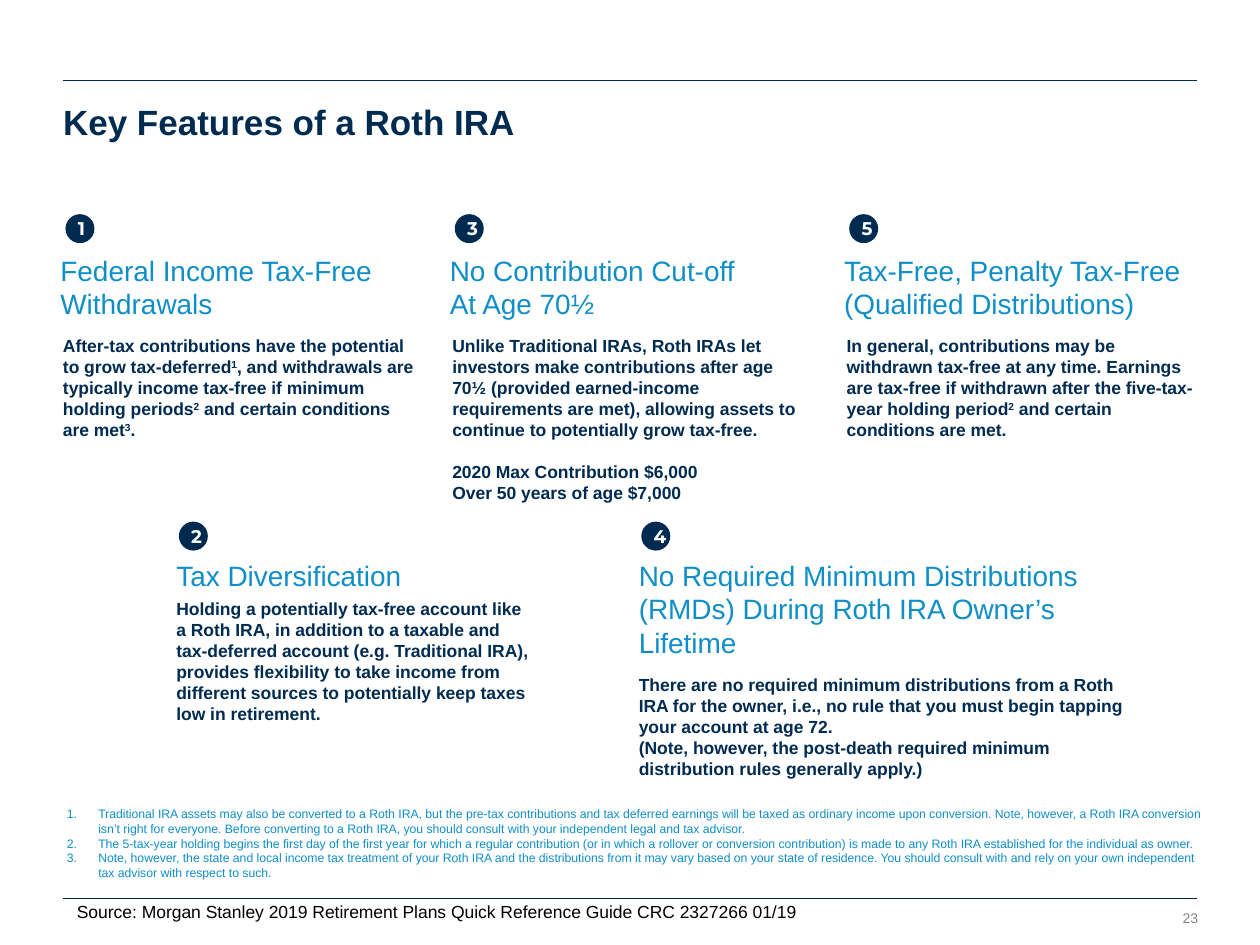
from lxml.etree import SubElement
from pptx import Presentation
from pptx.dml.color import RGBColor
from pptx.enum.shapes import MSO_CONNECTOR as CONN, MSO_SHAPE as SHAPE
from pptx.enum.text import MSO_ANCHOR as ANCHOR, MSO_AUTO_SIZE as AUTO, PP_ALIGN as ALIGN
from pptx.oxml.ns import qn
from pptx.util import Inches, Pt

NAVY = RGBColor(0x00, 0x2B, 0x51)
BLUE = RGBColor(0x0F, 0x8E, 0xC7)
GRAY = RGBColor(0x86, 0x86, 0x86)
BLACK = RGBColor(0x00, 0x00, 0x00)
WHITE = RGBColor(0xFF, 0xFF, 0xFF)

# Font formats
TITLE = dict(name="Arial", size=Pt(20), bold=True, color=NAVY)
HEADING = dict(name="Arial", size=Pt(16), bold=False, color=BLUE)
BODY = dict(name="Arial", size=Pt(10), bold=True, color=NAVY)
BADGE = dict(name="Montserrat", size=Pt(10.5), bold=True, color=WHITE)
NOTE = dict(name="Arial", size=Pt(7), bold=False, color=BLUE)
SOURCE = dict(name="Arial", size=Pt(10), bold=False, color=BLACK)
PAGE = dict(name="Arial", size=Pt(8), bold=False, color=GRAY)

# Grid: left edges of the upper and lower columns, tops of the badges
MARGIN, RIGHT = 0.5, 9.5
UPPER = (0.5, 3.59, 6.72)
LOWER = (1.4, 5.07)
UPPER_TOP, LOWER_TOP = 1.7, 4.14
COL_W, BADGE_D = 2.8, 0.23

# Superscripts stand between bars
FEATURES = [
    dict(number=1, x=UPPER[0], top=UPPER_TOP, shift=-0.02,
         heading=["Federal Income Tax-Free", "Withdrawals"],
         body=["After-tax contributions have the potential to grow tax-deferred|1|, and "
               "withdrawals are typically income tax-free if minimum holding periods|2| "
               "and certain conditions are met|3|."]),
    dict(number=2, x=LOWER[0], top=LOWER_TOP, heading_gap=0.29, body_gap=0.61,
         heading=["Tax Diversification"],
         body=["Holding a potentially tax-free account like a Roth IRA, in addition to a "
               "taxable and tax-deferred account (e.g. Traditional IRA), provides "
               "flexibility to take income from different sources to potentially keep "
               "taxes low in retirement."]),
    dict(number=3, x=UPPER[1], top=UPPER_TOP, shift=-0.02,
         heading=["No Contribution Cut-off", "At Age 70½"],
         body=["Unlike Traditional IRAs, Roth IRAs let investors make contributions after "
               "age 70½ (provided earned-income requirements are met), allowing assets to "
               "continue to potentially grow tax-free.",
               "2020 Max Contribution $6,000", "Over 50 years of age $7,000"],
         gap_before=1),
    dict(number=4, x=LOWER[1], top=LOWER_TOP, heading_gap=0.29, body_gap=1.21,
         heading_w=3.56, body_w=3.86,
         heading=["No Required Minimum Distributions (RMDs) During Roth IRA Owner’s Lifetime"],
         body=["There are no required minimum distributions from a Roth IRA for the owner, "
               "i.e., no rule that you must begin tapping your account at age 72.",
               "(Note, however, the post-death required minimum distribution rules "
               "generally apply.)"]),
    dict(number=5, x=UPPER[2], top=UPPER_TOP, shift=-0.02,
         heading=["Tax-Free, Penalty Tax-Free", "(Qualified Distributions)"],
         body=["In general, contributions may be withdrawn tax-free at any time. Earnings "
               "are tax-free if withdrawn after the five-tax-year holding period|2| and "
               "certain conditions are met."]),
]

FOOTNOTES = [
    "Traditional IRA assets may also be converted to a Roth IRA, but the pre-tax "
    "contributions and tax deferred earnings will be taxed as ordinary income upon "
    "conversion. Note, however, a Roth IRA conversion isn’t right for everyone. Before "
    "converting to a Roth IRA, you should consult with your independent legal and tax advisor.",
    "The 5-tax-year holding begins the first day of the first year for which a regular "
    "contribution (or in which a rollover or conversion contribution) is made to any Roth "
    "IRA established for the individual as owner.",
    "Note, however, the state and local income tax treatment of your Roth IRA and the "
    "distributions from it may vary based on your state of residence. You should consult "
    "with and rely on your own independent tax advisor with respect to such.",
]


def place(sp, x, y, w, h):
    sp.left, sp.top, sp.width, sp.height = (Inches(v) for v in (x, y, w, h))


def add_runs(p, text, fmt):
    for i, part in enumerate(text.split("|")):
        r = p.add_run()
        r.text = part
        for key, value in fmt.items():
            if key == "color":
                r.font.color.rgb = value
            else:
                setattr(r.font, key, value)
        if i % 2:
            r._r.get_or_add_rPr().set("baseline", "30000")


def number_paragraph(p):
    pPr = p._p.get_or_add_pPr()
    pPr.set("marL", str(Inches(0.25)))
    pPr.set("indent", str(-Inches(0.25)))
    SubElement(pPr, qn("a:buAutoNum"), type="arabicPeriod")


def fill_text(sp, lines, fmt, align=ALIGN.LEFT, leading=None, gap_before=None,
              numbered=False, wrap=True):
    tf = sp.text_frame
    frame = dict(margin_left=0, margin_top=0, margin_right=0, margin_bottom=0,
                 word_wrap=wrap, auto_size=AUTO.NONE, vertical_anchor=ANCHOR.TOP)
    for key, value in frame.items():
        setattr(tf, key, value)
    for i, line in enumerate(lines):
        p = tf.paragraphs[0] if i == 0 else tf.add_paragraph()
        if numbered:
            number_paragraph(p)
        p.alignment = align
        p.space_before = Pt(12 if i and i == gap_before else 0)
        if leading:
            p.line_spacing = leading
        add_runs(p, line, fmt)


def add_text(slide, box, lines, fmt, **options):
    sp = slide.shapes.add_textbox(*(Inches(v) for v in box))
    fill_text(sp, lines, fmt, **options)


def add_rule(slide, y, width):
    line = slide.shapes.add_connector(
        CONN.STRAIGHT, *(Inches(v) for v in (MARGIN, y, RIGHT, y)))
    line.line.color.rgb = NAVY
    line.line.width = Pt(width)
    SubElement(line._element.spPr, qn("a:effectLst"))


def add_badge(slide, x, y, number):
    sp = slide.shapes.add_shape(
        SHAPE.OVAL, *(Inches(v) for v in (x, y, BADGE_D, BADGE_D)))
    sp.shadow.inherit = False
    sp.fill.solid()
    sp.fill.fore_color.rgb = NAVY
    sp.line.fill.background()
    sp.text_frame.vertical_anchor = ANCHOR.MIDDLE
    p = sp.text_frame.paragraphs[0]
    p.alignment = ALIGN.CENTER
    add_runs(p, str(number), BADGE)


def add_feature(slide, number, x, top, heading, body, shift=0, heading_gap=0.31,
                body_gap=0.96, heading_w=COL_W, body_w=COL_W, gap_before=None):
    add_badge(slide, x + 0.02, top, number)
    add_text(slide, (x + shift, top + heading_gap, heading_w, 0.27 * len(heading)),
             heading, HEADING)
    add_text(slide, (x, top + body_gap, body_w, 0.84), body, BODY,
             leading=Pt(12), gap_before=gap_before)


def main():
    prs = Presentation()
    prs.slide_width, prs.slide_height = Inches(10), Inches(7.5)
    slide = prs.slides.add_slide(prs.slide_layouts[1])

    # Frame rules
    add_rule(slide, 0.64, 1)
    add_rule(slide, 7.13, 0.5)

    # Title
    title = slide.shapes.title
    place(title, MARGIN, 0.8, 9, 0.34)
    fill_text(title, ["Key Features of a Roth IRA"], TITLE)

    # Numbered features
    for feature in FEATURES:
        add_feature(slide, **feature)

    # Footnotes
    notes = slide.placeholders[1]
    place(notes, 0.53, 6.4, 9, 0.71)
    fill_text(notes, FOOTNOTES, NOTE, numbered=True)

    # Source and page number
    add_text(slide, (0.61, 7.15, 5.79, 0.17),
             ["Source: Morgan Stanley 2019 Retirement Plans Quick Reference Guide "
              "CRC 2327266 01/19"], SOURCE, wrap=False)
    add_text(slide, (9.37, 7.22, 0.14, 0.13), ["23"], PAGE, align=ALIGN.RIGHT, wrap=False)

    prs.save("out.pptx")


if __name__ == "__main__":
    main()
